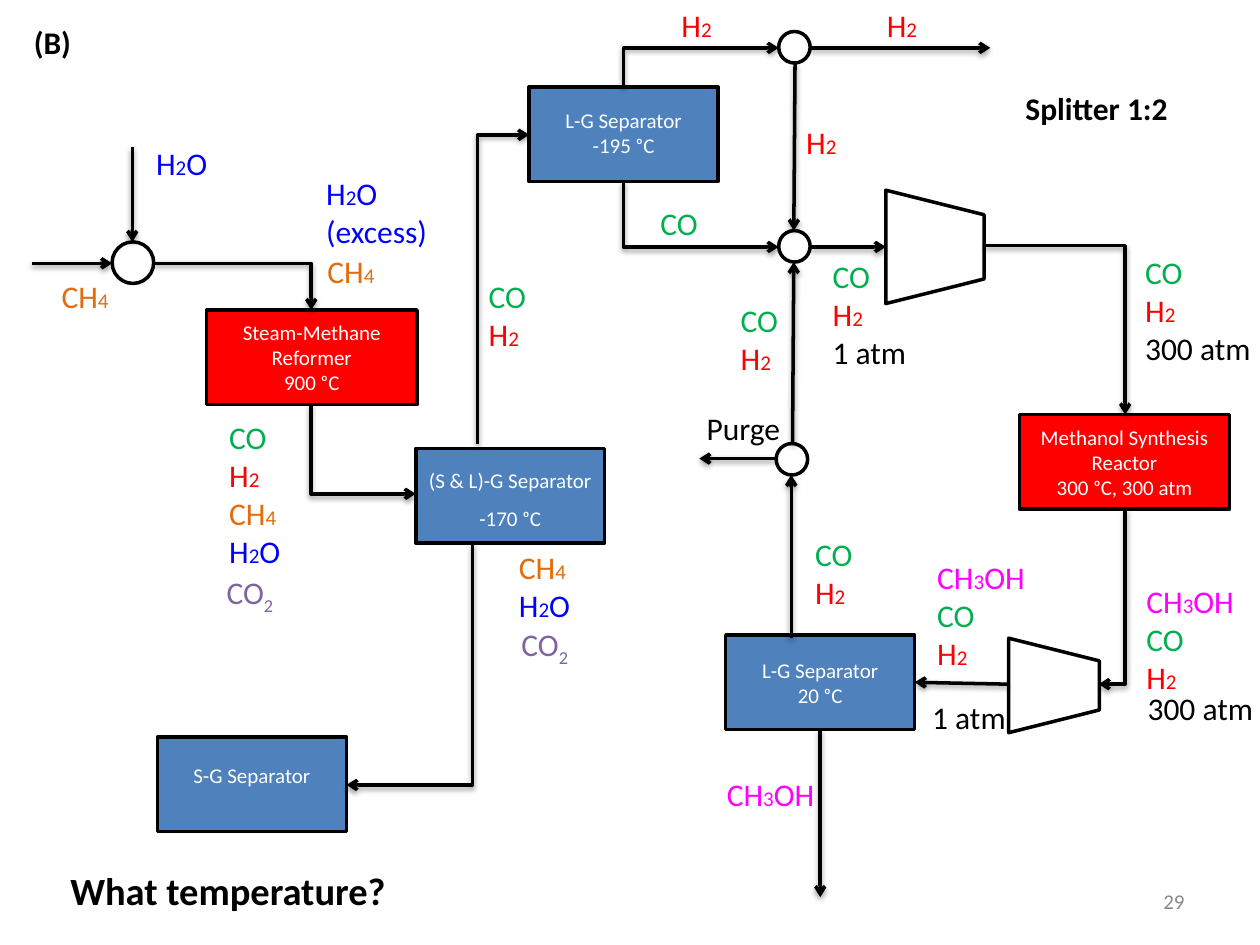
from itertools import groupby
from lxml.etree import SubElement
from pptx import Presentation
from pptx.dml.color import RGBColor
from pptx.enum.shapes import MSO_CONNECTOR, MSO_SHAPE
from pptx.enum.text import MSO_ANCHOR, MSO_AUTO_SIZE, PP_ALIGN
from pptx.oxml.ns import qn
from pptx.util import Inches, Pt

BLACK = RGBColor(0x00, 0x00, 0x00)
WHITE = RGBColor(0xFF, 0xFF, 0xFF)
GRAY = RGBColor(0x89, 0x89, 0x89)
RED = RGBColor(0xFF, 0x00, 0x00)
STEEL = RGBColor(0x4F, 0x81, 0xBD)
BLUE = RGBColor(0x00, 0x00, 0xFF)
GREEN = RGBColor(0x00, 0xB0, 0x50)
ORANGE = RGBColor(0xE4, 0x6C, 0x0A)
PINK = RGBColor(0xFF, 0x00, 0xFF)
PURPLE = RGBColor(0x80, 0x64, 0xA2)
PLAIN = (BLACK, WHITE, GRAY)

deck = Presentation()
deck.slide_width, deck.slide_height = Inches(10), Inches(7.5)
slide = deck.slides.add_slide(deck.slide_layouts[6])
shapes = slide.shapes


def write(frame, lines, size=18, bold=False, align=PP_ALIGN.LEFT, gap=0):
    for i, (text, color) in enumerate(lines):
        para = frame.paragraphs[0] if i == 0 else frame.add_paragraph()
        para.alignment = align
        para.space_before = Pt(gap if i else 0)
        parts = [(False, text)]
        if color not in PLAIN:
            parts = [(low, "".join(run)) for low, run in groupby(text, str.isdigit)]
        for low, part in parts:
            run = para.add_run()
            run.text = part
            small = low and color != PURPLE
            look = {"name": "Calibri", "size": Pt(12 if small else size), "bold": bold}
            for key, value in look.items():
                setattr(run.font, key, value)
            run.font.color.rgb = color
            if low and color == PURPLE:
                run._r.get_or_add_rPr().set("baseline", "-25000")


def draw(kind, left, top, width, height, fill):
    shape = shapes.add_shape(kind, Inches(left), Inches(top), Inches(width), Inches(height))
    shape.shadow.inherit = False
    shape.fill.solid()
    shape.fill.fore_color.rgb = fill
    shape.line.color.rgb = BLACK
    shape.line.width = Pt(2)
    return shape


units = [
    ("reform", 1.64, 2.46, 1.67, RED, ["Steam-Methane Reformer", "900 ᵒC"], 0, 0.05),
    ("synth", 8.09, 3.29, 1.67, RED, ["Methanol Synthesis Reactor", "300 ᵒC, 300 atm"], 0, 0.05),
    ("warm", 5.76, 5.04, 1.5, STEEL, ["L-G Separator", "20 ᵒC"], 0, 0.05),
    ("solid", 3.3, 3.56, 1.5, STEEL, ["(S & L)-G Separator", "-170 ᵒC"], 7, 0),
    ("cold", 4.2, 0.69, 1.5, STEEL, ["L-G Separator", "-195 ᵒC"], 0, 0.08),
    ("last", 1.25, 5.85, 1.5, STEEL, ["S-G Separator"], 0, 0.2),
]
boxes = {}
for name, left, top, width, fill, words, gap, base in units:
    box = draw(MSO_SHAPE.RECTANGLE, left, top, width, 0.75, fill)
    frame = box.text_frame
    room = {
        "word_wrap": True,
        "vertical_anchor": MSO_ANCHOR.MIDDLE,
        "margin_left": Inches(0.05),
        "margin_right": Inches(0.05),
        "margin_bottom": Inches(base),
    }
    for key, value in room.items():
        setattr(frame, key, value)
    write(frame, [(word, WHITE) for word in words], 12, align=PP_ALIGN.CENTER, gap=gap)
    boxes[name] = box

for left, top, width, height in [(6.97, 1.57, 0.9, 0.78), (7.99, 5.08, 0.75, 0.72)]:
    draw(MSO_SHAPE.TRAPEZOID, left, top, width, height, WHITE).rotation = 90

for left, top in [(6.18, 0.25), (6.18, 1.83), (6.16, 3.52)]:
    draw(MSO_SHAPE.OVAL, left, top, 0.25, 0.25, WHITE)
draw(MSO_SHAPE.FLOWCHART_CONNECTOR, 0.89, 1.92, 0.33, 0.33, WHITE)

straight = [
    (1.05, 1.17, 1.05, 1.92),
    (0.25, 2.09, 0.89, 2.09),
    (6.29, 3.52, 6.3, 2.08),
    (6.28, 5.06, 6.28, 3.77),
    (6.16, 3.64, 5.55, 3.64),
    (6.43, 1.96, 7.03, 1.96),
    (6.43, 0.38, 7.86, 0.38),
    (6.31, 0.5, 6.3, 1.83),
    (8, 5.43, 7.26, 5.42),
    (6.51, 5.79, 6.51, 7.12),
]
bent = [
    (1.22, 2.09, 2.47, 2.46, "tailEnd"),
    (7.81, 1.95, 8.93, 3.29, "tailEnd"),
    (3.3, 3.92, 2.47, 3.21, "headEnd"),
    (8.72, 5.43, 8.93, 4.04, "headEnd"),
    (4.2, 1.07, 3.79, 3.52, "headEnd"),
    (6.18, 0.38, 4.95, 0.69, "headEnd"),
    (6.18, 1.96, 4.95, 1.44, "headEnd"),
    (2.75, 6.23, 3.75, 4.31, "headEnd"),
]
joins = {
    (8, 5.43, 7.26, 5.42): ("end_connect", "warm", 3),
    (6.51, 5.79, 6.51, 7.12): ("begin_connect", "warm", 2),
}
for *ends, tip in [(*ends, "tailEnd") for ends in straight] + bent:
    ends = tuple(ends)
    turn = ends not in straight
    kind = MSO_CONNECTOR.ELBOW if turn else MSO_CONNECTOR.STRAIGHT
    link = shapes.add_connector(kind, *[Inches(end) for end in ends])
    link.line.color.rgb = BLACK
    link.line.width = Pt(2)
    props = link._element.spPr
    SubElement(props.find(qn("a:ln")), qn("a:" + tip), type="arrow")
    if turn:
        props.find(qn("a:prstGeom")).set("prst", "bentConnector2")
    if ends in joins:
        act, name, side = joins[ends]
        getattr(link, act)(boxes[name], side)

CO, H2, CH4 = ("CO", GREEN), ("H2", RED), ("CH4", ORANGE)
H2O, CO2, CH3OH = ("H2O", BLUE), ("CO2", PURPLE), ("CH3OH", PINK)
LOW, HIGH = ("1 atm", BLACK), ("300 atm", BLACK)
BOLD = {"bold": True}
notes = [
    (1.14, 1.09, 0.83, [H2O], {}),
    (0.39, 2.15, 0.83, [CH4], {}),
    (2.49, 1.33, 1.02, [("H2O (excess)", BLUE)], {}),
    (2.5, 1.95, 0.79, [CH4], {}),
    (1.72, 3.27, 0.75, [CO, H2, CH4, H2O], {}),
    (1.7, 4.5, 0.75, [CO2], {}),
    (3.78, 2.15, 0.92, [CO, H2], {}),
    (4.02, 4.3, 0.75, [CH4, H2O], {}),
    (4.04, 4.91, 0.75, [CO2], {}),
    (5.31, 0, 0.5, [H2], {}),
    (6.94, 0, 0.5, [H2], {}),
    (6.3, 0.93, 0.5, [H2], {}),
    (4.93, 1.57, 0.92, [CO], {"align": PP_ALIGN.CENTER}),
    (6.51, 1.99, 0.92, [CO, H2, LOW], {}),
    (8.99, 1.96, 1.1, [CO, H2, HIGH], {}),
    (5.78, 2.34, 0.58, [CO, H2], {}),
    (5.51, 3.2, 1.13, [("Purge", BLACK)], {}),
    (6.37, 4.2, 0.58, [CO, H2], {}),
    (7.34, 4.38, 1, [CH3OH, CO, H2], {}),
    (9, 4.57, 1, [CH3OH, CO, H2], {}),
    (9.01, 5.42, 1.13, [HIGH], {}),
    (7.3, 5.49, 1.13, [LOW], {}),
    (5.67, 6.1, 1.08, [CH3OH], {}),
    (0.17, 0.13, 0.58, [("(B)", BLACK)], BOLD),
    (8.04, 0.66, 1.72, [("Splitter 1:2", BLACK)], BOLD),
    (0.46, 6.83, 5.67, [("What temperature?", BLACK)], {"size": 22, "bold": True}),
    (7.17, 7, 2.33, [("29", GRAY)], {"size": 12, "align": PP_ALIGN.RIGHT}),
]
for left, top, width, lines, style in notes:
    tall = 0.1 + 0.3 * len(lines)
    note = shapes.add_textbox(Inches(left), Inches(top), Inches(width), Inches(tall))
    fit = {"word_wrap": True, "auto_size": MSO_AUTO_SIZE.SHAPE_TO_FIT_TEXT}
    for key, value in fit.items():
        setattr(note.text_frame, key, value)
    write(note.text_frame, lines, **style)

deck.save("out.pptx")
